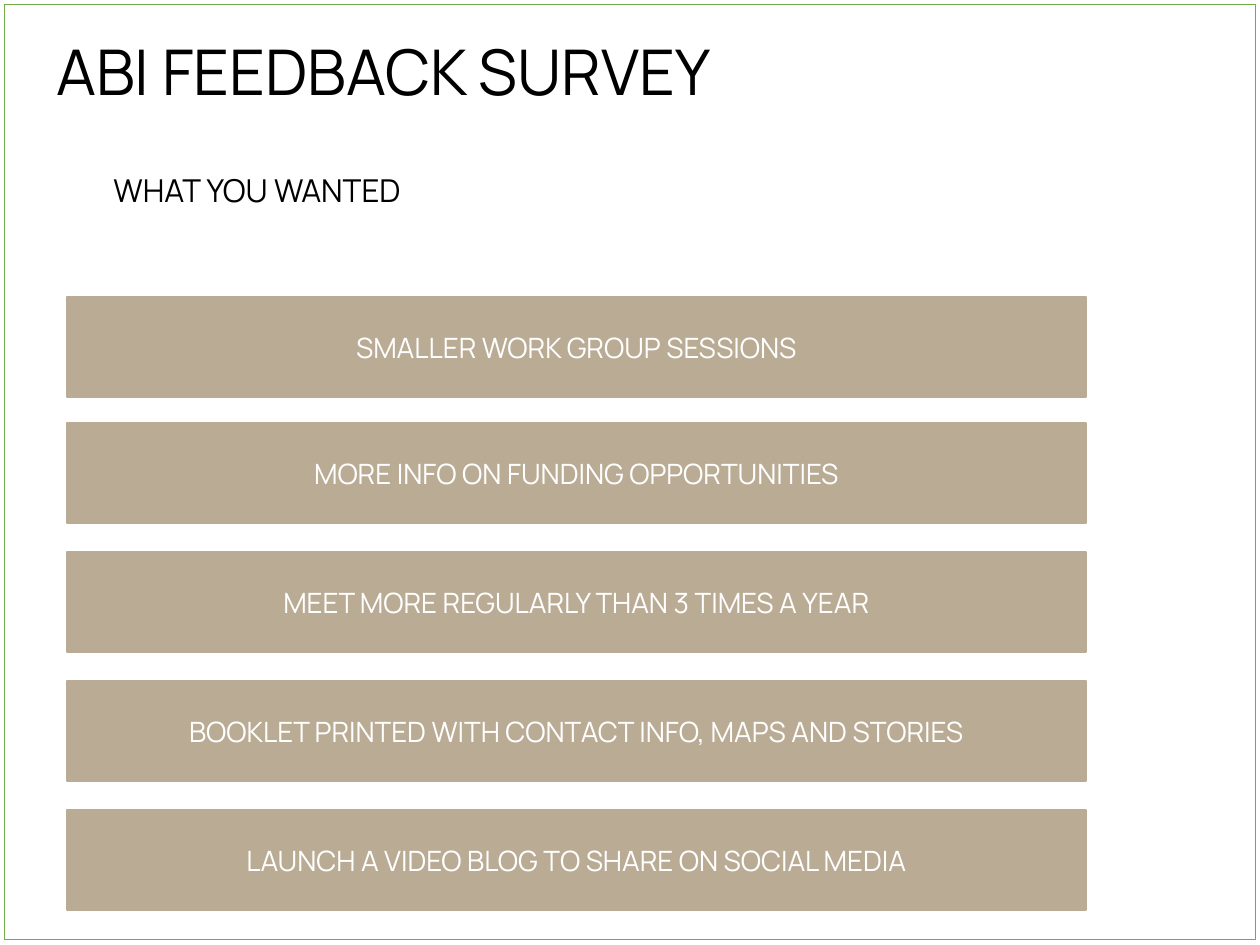
from pptx import Presentation
from pptx.dml.color import RGBColor
from pptx.enum.shapes import MSO_SHAPE as Shape
from pptx.enum.text import MSO_ANCHOR as Anchor, PP_ALIGN as Align
from pptx.util import Pt

EMU_PER_PX = 914400 // 126
FONT = "Manrope"
BLACK, WHITE, GREEN, SAND = "000000", "FFFFFF", "70AD47", "BAAB94"

REQUESTS = [
    "SMALLER WORK GROUP SESSIONS",
    "MORE INFO ON FUNDING OPPORTUNITIES",
    "MEET MORE REGULARLY THAN 3 TIMES A YEAR",
    "BOOKLET PRINTED WITH CONTACT INFO, MAPS AND STORIES",
    "LAUNCH A VIDEO BLOG TO SHARE ON SOCIAL MEDIA",
]
BAR_LEFT, BAR_WIDTH, BAR_HEIGHT = 67, 1019, 100
FIRST_BAR_TOP, SECOND_BAR_TOP, BAR_PITCH = 297, 423, 129


def px(*lengths):
    return [length * EMU_PER_PX for length in lengths]


def color(hex_string):
    return RGBColor.from_string(hex_string)


def write_text(shape, text, size=16, ink=BLACK, align=Align.LEFT, anchor=Anchor.TOP):
    frame = shape.text_frame
    frame.word_wrap = True
    frame.vertical_anchor = anchor
    paragraph = frame.paragraphs[0]
    paragraph.alignment = align
    run = paragraph.add_run()
    run.text = text
    run.font.name = FONT
    run.font.size = Pt(size)
    run.font.color.rgb = color(ink)


def add_heading(slide, box, text, size):
    write_text(slide.shapes.add_textbox(*px(*box)), text, size=size)


def add_rectangle(slide, box, fill, line, line_width):
    shape = slide.shapes.add_shape(Shape.RECTANGLE, *px(*box))
    shape.shadow.inherit = False
    shape.fill.solid()
    shape.fill.fore_color.rgb = color(fill)
    shape.line.color.rgb = color(line)
    shape.line.width = Pt(line_width)
    return shape


def add_bar(slide, top, text):
    bar = add_rectangle(slide, (BAR_LEFT, top, BAR_WIDTH, BAR_HEIGHT), SAND, SAND, 1)
    write_text(bar, text, ink=WHITE, align=Align.CENTER, anchor=Anchor.MIDDLE)


def main():
    presentation = Presentation()
    presentation.slide_width, presentation.slide_height = px(1260, 945)
    slide = presentation.slides.add_slide(presentation.slide_layouts[6])

    # Page frame
    add_rectangle(slide, (4, 4, 1251, 935), WHITE, GREEN, 0.25)

    # Headings
    add_heading(slide, (44, 26, 820, 89), "ABI FEEDBACK SURVEY", 36)
    add_heading(slide, (101, 165, 708, 50), "WHAT YOU WANTED", 18)

    # Survey requests: the first bar sits slightly closer to the rest
    add_bar(slide, FIRST_BAR_TOP, REQUESTS[0])
    for index, request in enumerate(REQUESTS[1:]):
        add_bar(slide, SECOND_BAR_TOP + index * BAR_PITCH, request)

    presentation.save("out.pptx")


if __name__ == "__main__":
    main()
